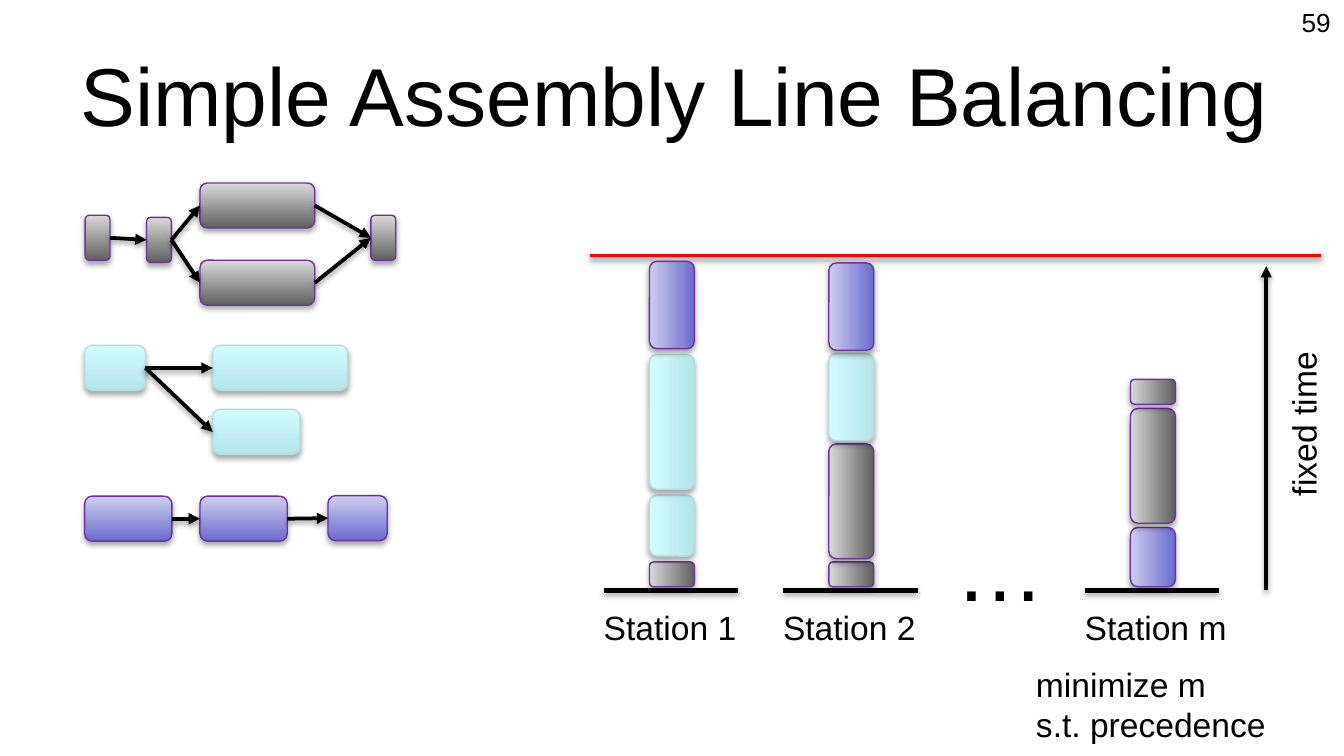
from dataclasses import dataclass

from lxml import etree
from pptx import Presentation
from pptx.dml.color import RGBColor
from pptx.enum.shapes import MSO_CONNECTOR, MSO_SHAPE
from pptx.enum.text import MSO_ANCHOR, MSO_AUTO_SIZE, PP_ALIGN
from pptx.oxml.ns import qn
from pptx.util import Cm, Pt

ROUNDED = MSO_SHAPE.ROUNDED_RECTANGLE
STRAIGHT = MSO_CONNECTOR.STRAIGHT
MIDDLE = MSO_ANCHOR.MIDDLE
GROW = MSO_AUTO_SIZE.SHAPE_TO_FIT_TEXT
LEFT, RIGHT = PP_ALIGN.LEFT, PP_ALIGN.RIGHT
LEFT_SIDE, RIGHT_SIDE = 1, 3


@dataclass(frozen=True)
class Theme:
    font: str = "Arial"
    title: int = 44
    ellipsis: int = 48
    label: int = 18
    number: int = 14
    black: str = "000000"
    limit: str = "FF0000"
    # Each product: dark end, light end, outline
    gray: tuple = ("606060", "D9D9D9", "7030A0")
    cyan: tuple = ("B5E5E9", "D3FBFF", "B6DCDF")
    purple: tuple = ("6B6BCF", "CECEEF", "7030A0")


THEME = Theme()
TASK_HEIGHT = 0.85
FLOOR = 11.09
BASE_Y = 11.16
BASE_LENGTH = 2.54

# Task durations are drawn as lengths in centimetres.
TINY, SHORT, SMALL, MEDIUM, LARGE, LONG = 0.47, 1.12, 1.15, 1.65, 2.17, 2.55

# Each product: colours, tasks (left, top, length), precedence pairs
PRODUCTS = [
    (THEME.cyan,
     [(1.6, 6.53, SMALL), (4.02, 6.53, LONG), (4.02, 7.74, MEDIUM)],
     [(0, 1), (0, 2)]),
    (THEME.purple,
     [(1.6, 9.38, MEDIUM), (3.78, 9.38, MEDIUM), (6.2, 9.37, SHORT)],
     [(0, 1), (1, 2)]),
    (THEME.gray,
     [(1.61, 4.07, TINY), (2.77, 4.11, TINY), (3.78, 3.46, LARGE),
      (3.78, 4.92, LARGE), (7.01, 4.07, TINY)],
     [(0, 1), (1, 2), (1, 3), (2, 4), (3, 4)]),
]

# Each station: name, label width, centre, gap between tasks, tasks from the floor up
STATIONS = [
    ("Station 1", 3.05, 12.7, 0.11,
     [(THEME.gray, TINY), (THEME.cyan, SMALL), (THEME.cyan, LONG),
      (THEME.purple, MEDIUM)]),
    ("Station 2", 3.05, 16.09, 0.06,
     [(THEME.gray, TINY), (THEME.gray, LARGE), (THEME.cyan, MEDIUM),
      (THEME.purple, MEDIUM)]),
    ("Station m", 3.25, 21.79, 0.08,
     [(THEME.purple, SHORT), (THEME.gray, LARGE), (THEME.gray, TINY)]),
]


def color(value):
    return RGBColor.from_string(value)


def set_shadow(element, distance, opacity):
    """Replace the theme shadow with a soft one that falls straight down."""
    properties = element.spPr
    for old in properties.findall(qn("a:effectLst")):
        properties.remove(old)
    effects = etree.SubElement(properties, qn("a:effectLst"))
    shadow = etree.SubElement(effects, qn("a:outerShdw"), blurRad=str(Pt(3.1)),
                              dist=str(Pt(distance)), dir="5400000",
                              rotWithShape="0")
    tone = etree.SubElement(shadow, qn("a:srgbClr"), val=THEME.black)
    etree.SubElement(tone, qn("a:alpha"), val=str(opacity * 1000))


def add_text(page, text, left, top, width, height, size, align=LEFT, wrap=False):
    box = page.shapes.add_textbox(Cm(left), Cm(top), Cm(width), Cm(height))
    frame = box.text_frame
    frame.word_wrap = wrap
    if not wrap:
        frame.auto_size = GROW
    para = frame.paragraphs[0]
    para.text = text
    para.alignment = align
    for span in para.runs:
        span.font.name = THEME.font
        span.font.size = Pt(size)
        span.font.color.rgb = color(THEME.black)
    return box


def add_task(page, left, top, length, colors):
    dark, light, outline = colors
    task = page.shapes.add_shape(ROUNDED, Cm(left), Cm(top), Cm(length),
                                 Cm(TASK_HEIGHT))
    task.fill.gradient()
    task.fill.gradient_angle = 90
    for stop, position, tone in zip(task.fill.gradient_stops, (0, 1), (dark, light)):
        stop.position = position
        stop.color.rgb = color(tone)
    task.line.color.rgb = color(outline)
    task.line.width = Pt(0.75)
    set_shadow(task._element, 1.8, 35)
    return task


def add_line(page, start, end, tone=THEME.black, width=2, arrow=False):
    line = page.shapes.add_connector(STRAIGHT, Cm(start[0]), Cm(start[1]),
                                     Cm(end[0]), Cm(end[1]))
    line.line.color.rgb = color(tone)
    line.line.width = Pt(width)
    if arrow:
        etree.SubElement(line.line._get_or_add_ln(), qn("a:tailEnd"), type="triangle")
    set_shadow(line._element, 1.6, 38)
    return line


def add_product(page, colors, tasks, precedence):
    boxes = [add_task(page, *place, colors) for place in tasks]
    for before, after in precedence:
        arrow = add_line(page, (0, 0), (1, 1), arrow=True)
        arrow.begin_connect(boxes[before], RIGHT_SIDE)
        arrow.end_connect(boxes[after], LEFT_SIDE)


def add_station(page, name, label_width, center, gap, tasks):
    """Draw a base line with its label and stack the upright tasks on it."""
    left = center - 1.29
    add_line(page, (left, BASE_Y), (left + BASE_LENGTH, BASE_Y), width=2.25)
    add_text(page, name, left - 0.25, 11.35, label_width, 1.02, THEME.label)
    bottom = FLOOR
    for colors, length in tasks:
        task = add_task(page, center - length / 2,
                        bottom - (length + TASK_HEIGHT) / 2, length, colors)
        task.rotation = 270
        bottom -= length + gap


def main():
    deck = Presentation()
    deck.slide_width, deck.slide_height = Cm(25.4), Cm(14.29)
    page = deck.slides.add_slide(deck.slide_layouts[6])

    title = add_text(page, "Simple Assembly Line Balancing", 1.27, 0.58, 23.29,
                     2.39, THEME.title, wrap=True)
    title.text_frame.vertical_anchor = MIDDLE
    add_text(page, "59", 23.7, 0, 1.7, 0.99, THEME.number, RIGHT, wrap=True)

    for product in PRODUCTS:
        add_product(page, *product)

    add_line(page, (11.15, 4.83), (24.97, 4.83), THEME.limit)
    for station in STATIONS:
        add_station(page, *station)
    add_text(page, "…", 17.81, 9.55, 2.24, 2.31, THEME.ellipsis)

    add_line(page, (23.93, 11.15), (23.93, 5.03), arrow=True)
    duration = add_text(page, "fixed time", 23.01, 7.49, 3.25, 1.02, THEME.label)
    duration.rotation = 270
    add_text(page, "minimize m\ns.t. precedence", 19.33, 12.42, 4.9, 1.8, THEME.label)

    deck.save("out.pptx")


if __name__ == "__main__":
    main()
